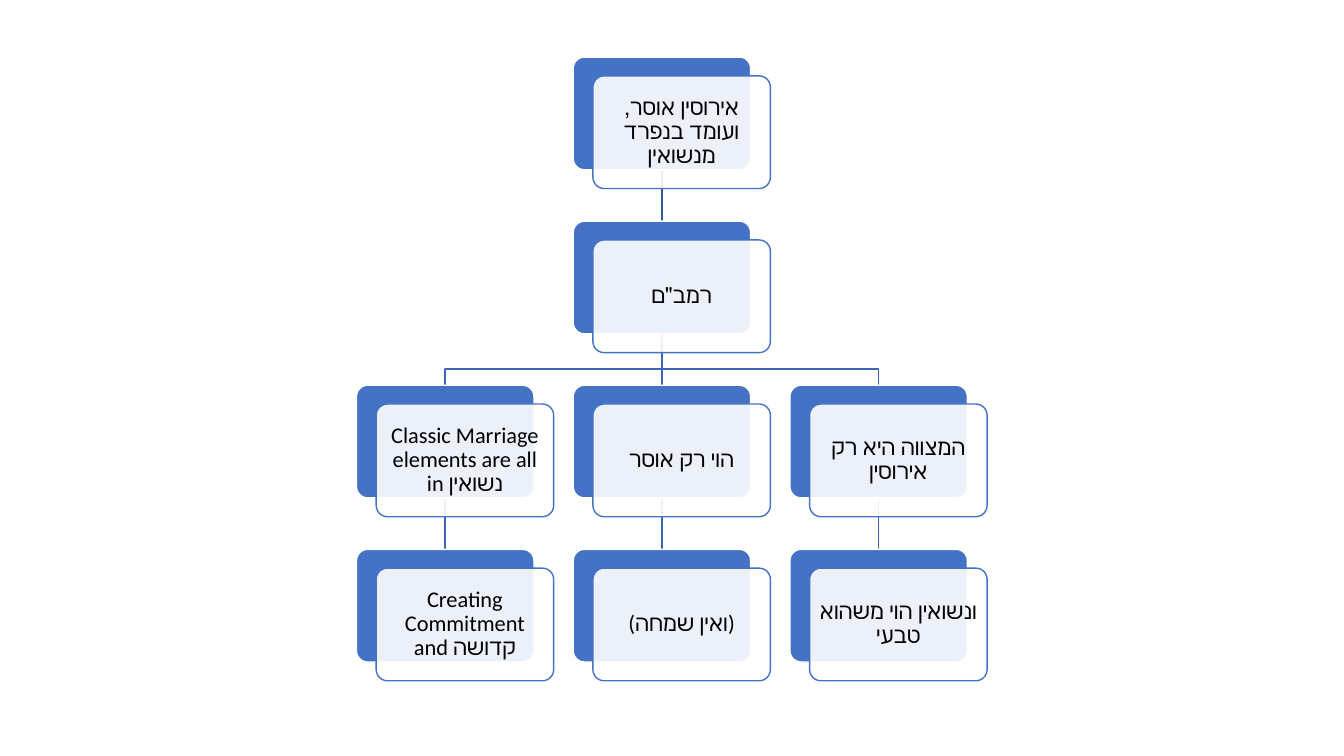
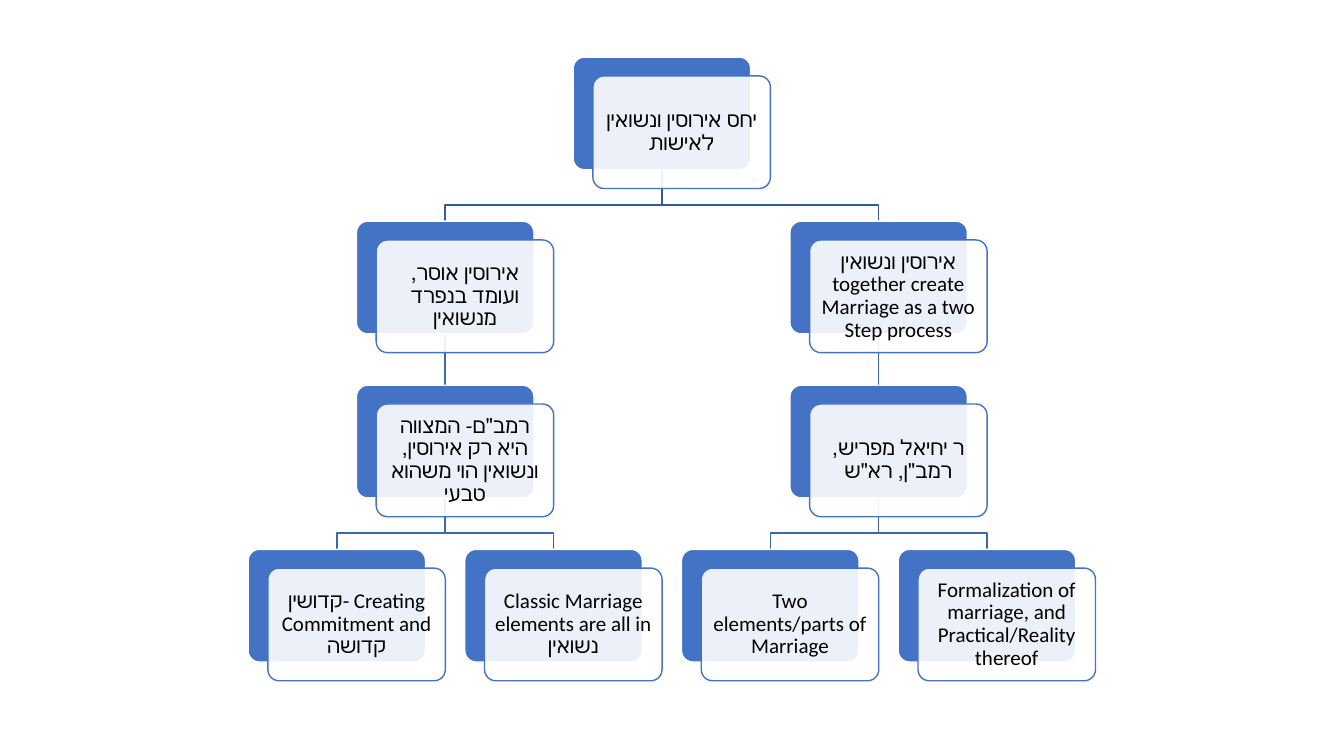
from dataclasses import dataclass, field

from lxml import etree
from pptx import Presentation
from pptx.dml.color import RGBColor
from pptx.enum.shapes import MSO_CONNECTOR, MSO_SHAPE
from pptx.enum.text import MSO_ANCHOR, PP_ALIGN
from pptx.oxml.ns import qn
from pptx.util import Pt

ROUNDED = MSO_SHAPE.ROUNDED_RECTANGLE
STRAIGHT = MSO_CONNECTOR.STRAIGHT
MIDDLE = MSO_ANCHOR.MIDDLE
CENTER = PP_ALIGN.CENTER

BLUE, WHITE, BLACK = "4472C4", "FFFFFF", "000000"
ROOT_LINK, LOWER_LINK = "365B9D", "3E67B2"
FONT = "Calibri"

SLIDE_WIDTH, SLIDE_HEIGHT = 960, 540
CHART_CENTER, CHART_TOP = 472.8, 40.8
CARD_WIDTH, CARD_HEIGHT = 126.8, 80.5
COLUMN_STEP, ROW_STEP = 154.8, 117.2
FRONT_SHIFT_X, FRONT_SHIFT_Y = 14.1, 13.4
LINK_BEND = 25.1


@dataclass
class Node:
    """One card of a hierarchy, with the cards below it."""
    text: str
    children: list = field(default_factory=list)
    center: float = 0
    top: float = 0


def rgb(color):
    """Turn a hex string into a colour."""
    return RGBColor.from_string(color)


def descendants(node):
    """Yield a node and everything below it."""
    yield node
    for child in node.children:
        yield from descendants(child)


def arrange(root):
    """Space the leaves evenly and centre each parent over its children."""
    leaves = [node for node in descendants(root) if not node.children]
    first_center = CHART_CENTER - (len(leaves) - 1) * COLUMN_STEP / 2
    for column, leaf in enumerate(leaves):
        leaf.center = first_center + column * COLUMN_STEP

    def place(node, level):
        """Set the row of a node and the centre of a parent."""
        node.top = CHART_TOP + level * ROW_STEP
        for child in node.children:
            place(child, level + 1)
        if node.children:
            node.center = (node.children[0].center + node.children[-1].center) / 2

    place(root, 0)


def add_link(slide, parent, child, color):
    """Join a parent card to a child card, bending if they are not aligned."""
    start = parent.top + CARD_HEIGHT
    if abs(parent.center - child.center) < 0.1:
        link = slide.shapes.add_connector(
            STRAIGHT, Pt(parent.center), Pt(start), Pt(child.center), Pt(child.top))
        etree.SubElement(link.element.spPr, qn("a:effectLst"))
    else:
        bend = start + LINK_BEND
        outline = slide.shapes.build_freeform(Pt(parent.center), Pt(start))
        corners = [(parent.center, bend), (child.center, bend), (child.center, child.top)]
        outline.add_line_segments([(Pt(x), Pt(y)) for x, y in corners], close=False)
        link = outline.convert_to_shape()
        link.fill.background()
        link.shadow.inherit = False
    link.line.color.rgb = rgb(color)
    link.line.width = Pt(1)


def add_panel(slide, left, top, fill, line):
    """Add one rounded panel of a card."""
    panel = slide.shapes.add_shape(
        ROUNDED, Pt(left), Pt(top), Pt(CARD_WIDTH), Pt(CARD_HEIGHT))
    panel.adjustments[0] = 0.1
    panel.shadow.inherit = False
    panel.fill.solid()
    panel.fill.fore_color.rgb = rgb(fill)
    panel.line.color.rgb = rgb(line)
    panel.line.width = Pt(1)
    return panel


def add_card(slide, node, size):
    """Add a blue panel with a translucent, labelled panel in front."""
    left = node.center - CARD_WIDTH / 2
    add_panel(slide, left, node.top, BLUE, WHITE)
    front = add_panel(slide, left + FRONT_SHIFT_X, node.top + FRONT_SHIFT_Y, WHITE, BLUE)
    tint = front.element.spPr.find(qn("a:solidFill"))[0]
    etree.SubElement(tint, qn("a:alpha"), val="90000")

    frame = front.text_frame
    frame.text = node.text
    frame.word_wrap = True
    frame.vertical_anchor = MIDDLE
    inset = Pt(size * 0.3)
    frame.margin_left = frame.margin_right = inset
    frame.margin_top = frame.margin_bottom = inset
    label = frame.paragraphs[0]
    label.alignment = CENTER
    label.line_spacing = 0.9
    font = label.runs[0].font
    font.name = FONT
    font.size = Pt(size)
    font.color.rgb = rgb(BLACK)


def add_hierarchy_slide(deck, root, size):
    """Add a slide holding one hierarchy, its links behind its cards."""
    slide = deck.slides.add_slide(deck.slide_layouts[6])
    arrange(root)
    for parent in descendants(root):
        for child in parent.children:
            add_link(slide, parent, child, ROOT_LINK if parent is root else LOWER_LINK)
    for node in descendants(root):
        add_card(slide, node, size)


def rambam_view():
    """Return the hierarchy of the first slide."""
    return Node("אירוסין אוסר, ועומד בנפרד מנשואין", [
        Node('רמב"ם', [
            Node("Classic Marriage elements are all in נשואין", [
                Node("Creating Commitment and קדושה")]),
            Node("הוי רק אוסר", [
                Node("(ואין שמחה)")]),
            Node("המצווה היא רק אירוסין", [
                Node("ונשואין הוי משהוא טבעי")]),
        ]),
    ])


def two_views():
    """Return the hierarchy of the second slide."""
    return Node("יחס אירוסין ונשואין לאישות", [
        Node("אירוסין אוסר, ועומד בנפרד מנשואין", [
            Node('רמב"ם- המצווה היא רק אירוסין, ונשואין הוי משהוא טבעי', [
                Node("קדושין- Creating Commitment and קדושה"),
                Node("Classic Marriage elements are all in נשואין"),
            ]),
        ]),
        Node("אירוסין ונשואין together create Marriage as a two Step process", [
            Node('ר יחיאל מפריש, רמב"ן, רא"ש', [
                Node("Two elements/parts of Marriage"),
                Node("Formalization of marriage, and Practical/Reality thereof"),
            ]),
        ]),
    ])


def main():
    """Build and save the deck."""
    deck = Presentation()
    deck.slide_width, deck.slide_height = Pt(SLIDE_WIDTH), Pt(SLIDE_HEIGHT)
    add_hierarchy_slide(deck, rambam_view(), 16)
    add_hierarchy_slide(deck, two_views(), 15)
    deck.save("out.pptx")


if __name__ == "__main__":
    main()
